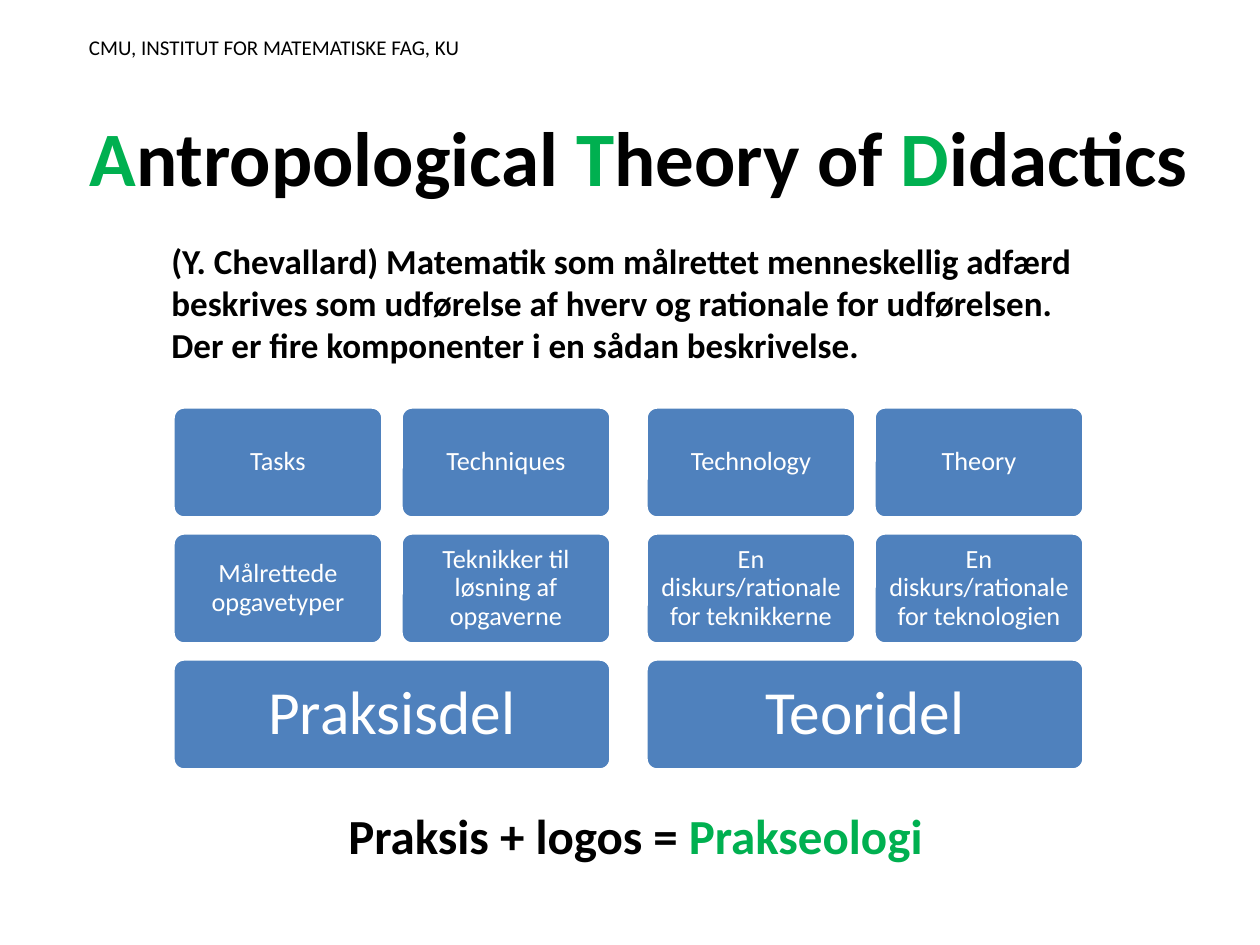
from pptx import Presentation
from pptx.dml.color import RGBColor
from pptx.enum.shapes import MSO_SHAPE
from pptx.enum.text import MSO_ANCHOR, PP_ALIGN
from pptx.util import Emu, Pt

PX = 914400 / 126
BLACK = RGBColor(0x00, 0x00, 0x00)
WHITE = RGBColor(0xFF, 0xFF, 0xFF)
GREEN = RGBColor(0x00, 0xB0, 0x50)
BLUE = RGBColor(0x4F, 0x81, 0xBD)

presentation = Presentation()
presentation.slide_width = Emu(round(1260 * PX))
presentation.slide_height = Emu(round(945 * PX))
slide = presentation.slides.add_slide(presentation.slide_layouts[6])


def add_text(box, runs, size, bold=True):
    left, top, width, height = [Emu(round(length * PX)) for length in box]
    text_frame = slide.shapes.add_textbox(left, top, width, height).text_frame
    text_frame.word_wrap = True
    paragraph = text_frame.paragraphs[0]
    for text, color in runs:
        run = paragraph.add_run()
        run.text = text
        run.font.name = "Calibri"
        run.font.size = Pt(size)
        run.font.bold = bold
        run.font.color.rgb = color
    return text_frame


def add_card(left, top, width, text, size, inset):
    shape = slide.shapes.add_shape(
        MSO_SHAPE.ROUNDED_RECTANGLE,
        *[Emu(round(length * PX)) for length in (left, top, width, CARD_HEIGHT)],
    )
    shape.adjustments[0] = 0.1
    shape.shadow.inherit = False
    shape.fill.solid()
    shape.fill.fore_color.rgb = BLUE
    shape.line.color.rgb = WHITE
    shape.line.width = Pt(2)
    text_frame = shape.text_frame
    text_frame.text = text
    text_frame.word_wrap = True
    text_frame.vertical_anchor = MSO_ANCHOR.MIDDLE
    margin = Emu(round(inset * PX))
    text_frame.margin_left = text_frame.margin_right = margin
    text_frame.margin_top = text_frame.margin_bottom = margin
    paragraph = text_frame.paragraphs[0]
    paragraph.alignment = PP_ALIGN.CENTER
    paragraph.line_spacing = 0.9
    font = paragraph.runs[0].font
    font.name = "Calibri"
    font.size = Pt(size)
    font.color.rgb = WHITE


header = add_text(
    (89, 28, 960, 32), [("CMU, INSTITUT FOR MATEMATISKE FAG, KU", BLACK)], 12, False
)
header.margin_left = header.margin_right = header.margin_bottom = 0

title = add_text(
    (77, 77, 1134, 158),
    [
        ("A", GREEN),
        ("ntropological ", BLACK),
        ("T", GREEN),
        ("heory of ", BLACK),
        ("D", GREEN),
        ("idactics", BLACK),
    ],
    44,
)
title.vertical_anchor = MSO_ANCHOR.MIDDLE

add_text(
    (159, 233, 942, 183),
    [
        (
            "(Y. Chevallard) Matematik som målrettet menneskellig adfærd "
            "beskrives som udførelse af hverv og rationale for udførelsen. "
            "Der er fire komponenter i en sådan beskrivelse.",
            BLACK,
        )
    ],
    20,
)

CARD_LEFT, CARD_TOP = 173, 407
CARD_WIDTH, CARD_HEIGHT = 210, 111
COLUMN_STEP, ROW_STEP, GROUP_STEP = 228, 126, 473

groups = [
    (
        "Praksisdel",
        [
            ("Tasks", "Målrettede opgavetyper"),
            ("Techniques", "Teknikker til løsning af opgaverne"),
        ],
    ),
    (
        "Teoridel",
        [
            ("Technology", "En diskurs/rationale for teknikkerne"),
            ("Theory", "En diskurs/rationale for teknologien"),
        ],
    ),
]

for group_index, (group_name, columns) in enumerate(groups):
    group_left = CARD_LEFT + group_index * GROUP_STEP
    add_card(
        group_left, CARD_TOP + 2 * ROW_STEP, COLUMN_STEP + CARD_WIDTH, group_name, 35, 19
    )
    for column, texts in enumerate(columns):
        for row, text in enumerate(texts):
            add_card(
                group_left + column * COLUMN_STEP,
                CARD_TOP + row * ROW_STEP,
                CARD_WIDTH,
                text,
                15,
                8,
            )

add_text(
    (336, 799, 738, 72), [("Praksis + logos = ", BLACK), ("Prakseologi", GREEN)], 28
)

presentation.save("out.pptx")
